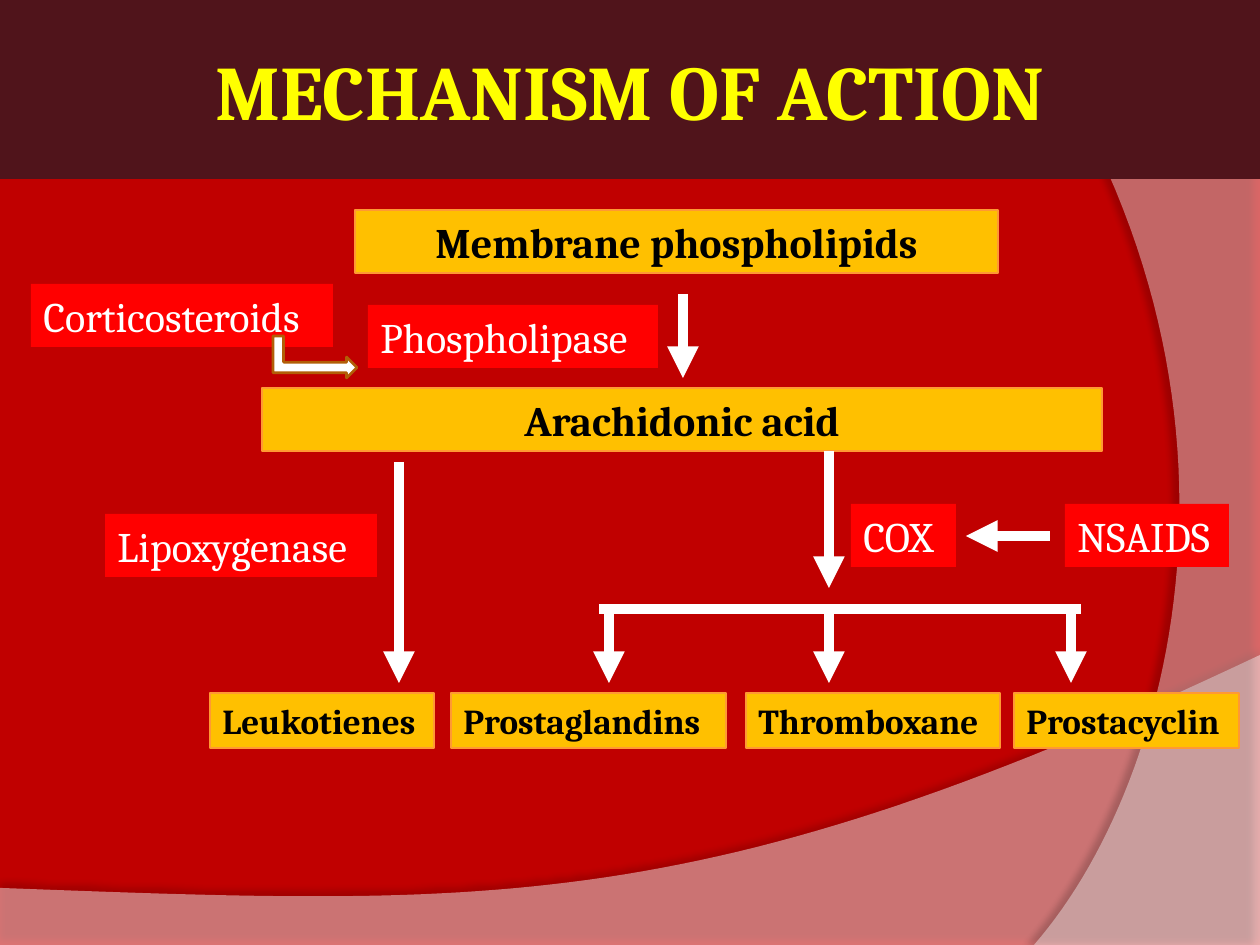
import dataclasses

import pptx
import pptx.dml.color
import pptx.enum.shapes
import pptx.enum.text
import pptx.oxml
import pptx.oxml.ns
import pptx.util

SHAPE = pptx.enum.shapes.MSO_SHAPE
ALIGN = pptx.enum.text.PP_ALIGN
EMU_PER_PX = 914400 / 126


@dataclasses.dataclass(frozen=True)
class Theme:
    """Colours, font and type sizes of the slide."""
    font: str = "Cambria"
    background: str = "C00000"
    band: str = "50141B"
    title: str = "FFFF00"
    compound: str = "FFC000"
    compound_line: str = "FF9933"
    compound_text: str = "000000"
    label: str = "FF0000"
    white: str = "FFFFFF"
    bend_line: str = "B25E07"
    title_size: int = 44
    stage_size: int = 24
    product_size: int = 20


def emu(px):
    """Turn pixels into EMU."""
    return pptx.util.Emu(round(px * EMU_PER_PX))


def rgb(color):
    """Turn a hex string into a colour."""
    return pptx.dml.color.RGBColor.from_string(color)


def curve(p0, p1, p2, p3, steps=60):
    """Return the points of a cubic curve after its start."""
    points = []
    for i in range(1, steps + 1):
        t = i / steps
        weights = ((1 - t) ** 3, 3 * t * (1 - t) ** 2, 3 * t * t * (1 - t), t ** 3)
        points.append(tuple(sum(w * p[axis] for w, p in zip(weights, (p0, p1, p2, p3)))
                            for axis in (0, 1)))
    return points


class Deck:
    """Holds the theme and the current slide and draws each kind of element."""

    def __init__(self, prs, theme):
        """Add a title slide with a plain background."""
        self.theme = theme
        self.slide = prs.slides.add_slide(prs.slide_layouts[5])
        fill = self.slide.background.fill
        fill.solid()
        fill.fore_color.rgb = rgb(theme.background)

    def paint(self, sp, fill, line=None, width=0.75):
        """Set the fill and outline of a shape."""
        sp.fill.solid()
        sp.fill.fore_color.rgb = rgb(fill)
        if line:
            sp.line.color.rgb = rgb(line)
            sp.line.width = pptx.util.Pt(width)
        else:
            sp.line.fill.background()

    def set_text(self, sp, text, size, color, bold=False, align=ALIGN.LEFT):
        """Put one formatted paragraph into a shape."""
        tf = sp.text_frame
        tf.text = text
        p = tf.paragraphs[0]
        p.alignment = align
        font = p.runs[0].font
        font.name, font.size, font.bold = self.theme.font, pptx.util.Pt(size), bold
        font.color.rgb = rgb(color)

    def wave(self, points, alpha, shadow_alpha, distance, direction):
        """Draw a translucent white wave with a soft shadow."""
        points = [(emu(x), emu(y)) for x, y in points]
        builder = self.slide.shapes.build_freeform(*points[0], scale=1.0)
        builder.add_line_segments(points[1:], close=True)
        sp = builder.convert_to_shape()
        self.paint(sp, self.theme.white)
        color = sp._element.spPr.find(".//" + pptx.oxml.ns.qn("a:srgbClr"))
        color.append(pptx.oxml.parse_xml(
            f'<a:alpha {pptx.oxml.ns.nsdecls("a")} val="{alpha * 1000}"/>'))
        sp._element.spPr.append(pptx.oxml.parse_xml(
            f'<a:effectLst {pptx.oxml.ns.nsdecls("a")}><a:outerShdw blurRad="50800" '
            f'dist="{pptx.util.Pt(distance)}" dir="{direction * 60000}" rotWithShape="0">'
            f'<a:srgbClr val="000000"><a:alpha val="{shadow_alpha * 1000}"/></a:srgbClr>'
            '</a:outerShdw></a:effectLst>'))

    def title(self, text, width, height):
        """Fill the title placeholder and bring it in front of the waves."""
        sp = self.slide.shapes.title
        sp.left, sp.top, sp.width, sp.height = 0, 0, emu(width), emu(height)
        self.paint(sp, self.theme.band)
        self.set_text(sp, text, self.theme.title_size, self.theme.title, True, ALIGN.CENTER)
        tf = sp.text_frame
        tf.vertical_anchor = pptx.enum.text.MSO_ANCHOR.MIDDLE
        tf.margin_left = tf.margin_right = tf.margin_top = tf.margin_bottom = pptx.util.Inches(0.05)
        self.slide.shapes._spTree.append(sp._element)

    def shape(self, kind, x, y, w, h):
        """Add a preset shape without a shadow."""
        sp = self.slide.shapes.add_shape(kind, emu(x), emu(y), emu(w), emu(h))
        sp.shadow.inherit = False
        return sp

    def box(self, x, y, w, h, wrap):
        """Add a rectangle that grows with its text."""
        sp = self.shape(SHAPE.RECTANGLE, x, y, w, h)
        tf = sp.text_frame
        tf.word_wrap = wrap
        tf.auto_size = pptx.enum.text.MSO_AUTO_SIZE.SHAPE_TO_FIT_TEXT
        tf.vertical_anchor = pptx.enum.text.MSO_ANCHOR.TOP
        return sp

    def compound(self, text, x, y, w, h, size, align=ALIGN.LEFT, wrap=True):
        """Add a gold box that names a compound."""
        sp = self.box(x, y, w, h, wrap)
        self.paint(sp, self.theme.compound, self.theme.compound_line)
        self.set_text(sp, text, size, self.theme.compound_text, True, align)

    def label(self, text, x, y, w, wrap=True):
        """Add a red box that names an enzyme or a drug."""
        sp = self.box(x, y, w, 63, wrap)
        self.paint(sp, self.theme.label)
        self.set_text(sp, text, self.theme.stage_size, self.theme.white)

    def line(self, x1, y1, x2, y2, arrow=True):
        """Add a thick white line, with an arrowhead unless told otherwise."""
        cxn = self.slide.shapes.add_connector(
            pptx.enum.shapes.MSO_CONNECTOR.STRAIGHT, emu(x1), emu(y1), emu(x2), emu(y2))
        cxn.line.color.rgb = rgb(self.theme.white)
        cxn.line.width = pptx.util.Pt(6)
        ns = pptx.oxml.ns.nsdecls("a")
        if arrow:
            cxn.line._get_or_add_ln().append(
                pptx.oxml.parse_xml(f'<a:tailEnd {ns} type="triangle"/>'))
        cxn._element.spPr.append(pptx.oxml.parse_xml(f'<a:effectLst {ns}/>'))

    def bend(self, x, y, w, h):
        """Add a bent arrow turned to point right."""
        sp = self.shape(SHAPE.BENT_UP_ARROW, x, y, w, h)
        sp.rotation = 90
        self.paint(sp, self.theme.white, self.theme.bend_line, 1.5)


def main():
    """Build the slide and save it."""
    prs = pptx.Presentation()
    prs.slide_width, prs.slide_height = emu(1260), emu(945)
    theme = Theme()
    deck = Deck(prs, theme)

    deck.wave([(0, 888), (0, 946), (1260, 946), (1260, 655)]
              + curve((1260, 655), (704, 919), (493, 906), (0, 888)), 45, 35, 3.5, 270)
    deck.wave([(1260, 3), (1260, 945), (1034, 945)]
              + curve((1034, 945), (1178, 780), (1283, 378), (1008, 0)), 40, 45, 4, 180)
    deck.title("MECHANISM OF ACTION", 1260, 179)

    for text, x, y, w in (("Membrane phospholipids", 355, 210, 643),
                          ("Arachidonic acid", 262, 388, 840)):
        deck.compound(text, x, y, w, 63, theme.stage_size, ALIGN.CENTER)
    for text, x, w, wrap in (("Leukotienes", 210, 224, False), ("Prostaglandins", 451, 275, True),
                             ("Thromboxane", 746, 254, False), ("Prostacyclin", 1014, 225, False)):
        deck.compound(text, x, 693, w, 55, theme.product_size, wrap=wrap)

    deck.line(683, 294, 683, 378)
    deck.line(399, 462, 399, 683)
    deck.line(829, 451, 829, 588)
    for text, x, y, w, wrap in (("COX", 851, 504, 105, True), ("Lipoxygenase", 105, 514, 272, True),
                                ("NSAIDS", 1065, 504, 164, False),
                                ("Phospholipase", 368, 305, 290, False),
                                ("Corticosteroids", 31, 284, 302, False)):
        deck.label(text, x, y, w, wrap)
    deck.line(1050, 536, 966, 536)
    for x in (609, 829, 1071):
        deck.line(x, 609, x, 683)
    deck.line(599, 609, 1081, 609, arrow=False)
    deck.bend(294, 315, 42, 84)

    prs.save("out.pptx")


if __name__ == "__main__":
    main()
